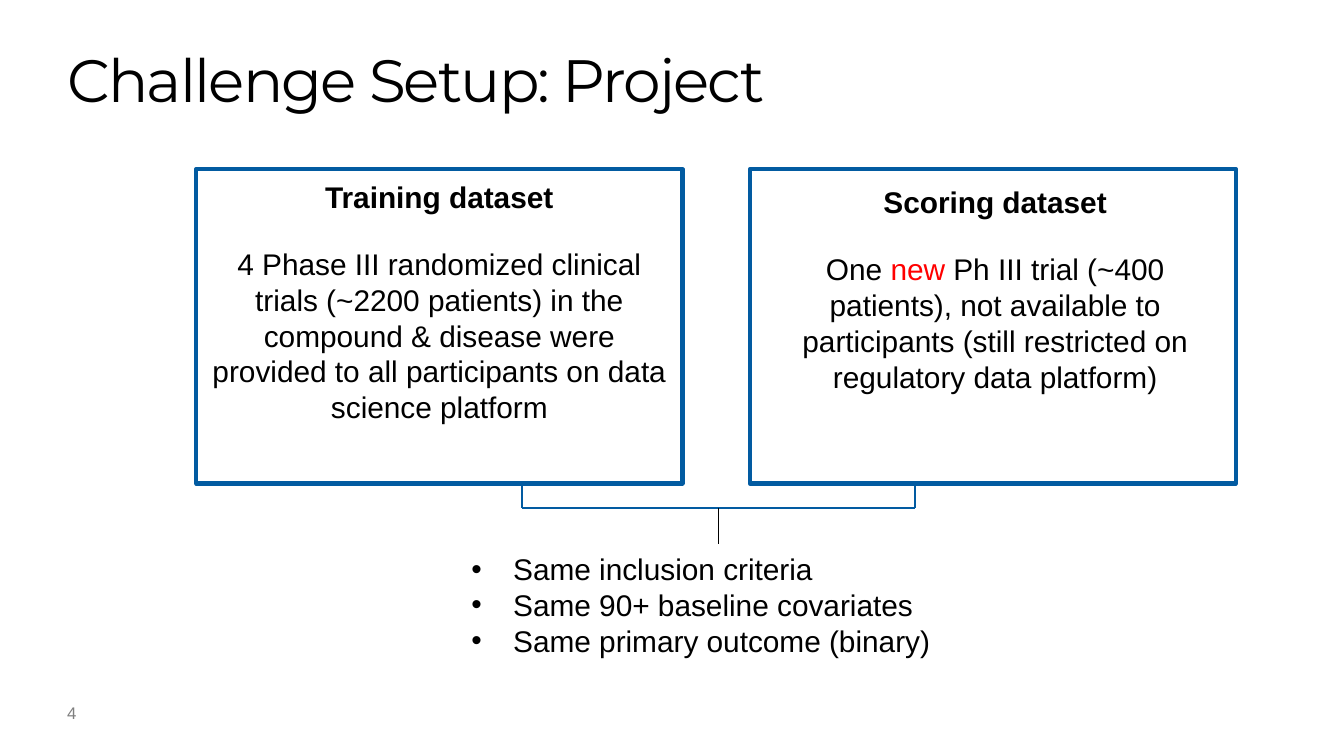
import pptx
import pptx.dml.color
import pptx.enum.shapes
import pptx.enum.text
import pptx.oxml.ns
import pptx.util
from lxml import etree

Cm = pptx.util.Cm
Pt = pptx.util.Pt
CENTER = pptx.enum.text.PP_ALIGN.CENTER
LEFT = pptx.enum.text.PP_ALIGN.LEFT


def colour(value):
    return pptx.dml.color.RGBColor.from_string(value)


def apply(target, formats):
    for name, value in formats.items():
        setattr(target, name, value)


class SlideBuilder:
    font = "Arial"
    blue = "025BA1"
    black = "000000"
    red = "FF0000"
    grey = "7F7F7F"
    body_size = 16

    def __init__(self, slide):
        self.slide = slide

    def text(self, box, paragraphs, inset=None, **layout):
        frame = self.slide.shapes.add_textbox(*map(Cm, box)).text_frame
        frame.word_wrap = True
        if inset is not None:
            sides = ("left", "right", "top", "bottom")
            apply(frame, {f"margin_{side}": Cm(inset) for side in sides})
        for index, runs in enumerate(paragraphs):
            paragraph = frame.add_paragraph() if index else frame.paragraphs[0]
            apply(paragraph, {"alignment": LEFT, **layout})
            for words, style in runs:
                self.run(paragraph, words, **style)
        return frame

    def run(self, paragraph, words, size=body_size, font=font, ink=black, bold=False):
        run = paragraph.add_run()
        run.text = words
        apply(run.font, {"size": Pt(size), "name": font, "bold": bold})
        run.font.color.rgb = colour(ink)

    def title(self, box, words):
        style = {"size": 32, "font": "Montserrat"}
        frame = self.text(box, [[(words, style)]], inset=0, line_spacing=0.9)
        frame.paragraphs[0].runs[0].font._element.set("spc", "-100")

    def dataset(self, frame_box, text_box, heading, description):
        paragraphs = [[(heading, {"bold": True})], description]
        frame = self.text(text_box, paragraphs, alignment=CENTER)
        frame.paragraphs[1].space_before = Pt(16.8)
        outline = self.slide.shapes.add_shape(
            pptx.enum.shapes.MSO_SHAPE.RECTANGLE, *map(Cm, frame_box))
        outline.shadow.inherit = False
        outline.fill.background()
        outline.line.color.rgb = colour(self.blue)
        outline.line.width = Pt(2.25)

    def line(self, start, end, ink=blue, width=1):
        connector = self.slide.shapes.add_connector(
            pptx.enum.shapes.MSO_CONNECTOR.STRAIGHT, *map(Cm, start + end))
        connector.line.color.rgb = colour(ink)
        connector.line.width = Pt(width)
        etree.SubElement(connector._element.spPr, pptx.oxml.ns.qn("a:effectLst"))

    def bullets(self, box, items, indent):
        frame = self.text(box, [[(item, {})] for item in items])
        for paragraph in frame.paragraphs:
            properties = paragraph._p.get_or_add_pPr()
            properties.set("marL", str(Cm(indent)))
            properties.set("indent", str(-Cm(indent)))
            for tag, name, value in (("a:buFont", "typeface", self.font),
                                     ("a:buChar", "char", "•")):
                etree.SubElement(properties, pptx.oxml.ns.qn(tag)).set(name, value)


def main():
    presentation = pptx.Presentation()
    apply(presentation, {"slide_width": Cm(25.4), "slide_height": Cm(14.29)})
    builder = SlideBuilder(presentation.slides.add_slide(presentation.slide_layouts[6]))

    builder.title((1.27, 0.97, 22.86, 2.67), "Challenge Setup: Project")
    builder.text((1.27, 13.28, 0.64, 0.64),
                 [[("4", {"size": 9, "ink": builder.grey})]], inset=0)

    top, width, height = 3.2, 9.19, 5.94
    training_left, scoring_left = 3.71, 14.17
    builder.dataset(
        (training_left, top, width, height), (training_left, 3.25, width, 5.56),
        "Training dataset",
        [("4 Phase III randomized clinical trials (~2200 patients) in the compound "
          "& disease were provided to all participants on data science platform", {})])
    builder.dataset(
        (scoring_left, top, width, height), (14.25, 3.35, 9.12, 4.27),
        "Scoring dataset",
        [("One ", {}), ("new", {"ink": builder.red}),
         (" Ph III trial (~400 patients), not available to participants "
          "(still restricted on regulatory data platform)", {})])

    training_x, scoring_x = 9.86, 17.29
    bracket_y, criteria_top = 9.6, 10.29
    for x in (training_x, scoring_x):
        builder.line((x, top + height), (x, bracket_y))
    builder.line((training_x, bracket_y), (scoring_x, bracket_y))
    middle = (training_x + scoring_x) / 2
    builder.line((middle, bracket_y), (middle, criteria_top), builder.black, 0.5)

    builder.bullets((8.66, criteria_top, 9.8, 3),
                    ["Same inclusion criteria", "Same 90+ baseline covariates",
                     "Same primary outcome (binary)"], indent=0.79)
    presentation.save("out.pptx")


if __name__ == "__main__":
    main()
